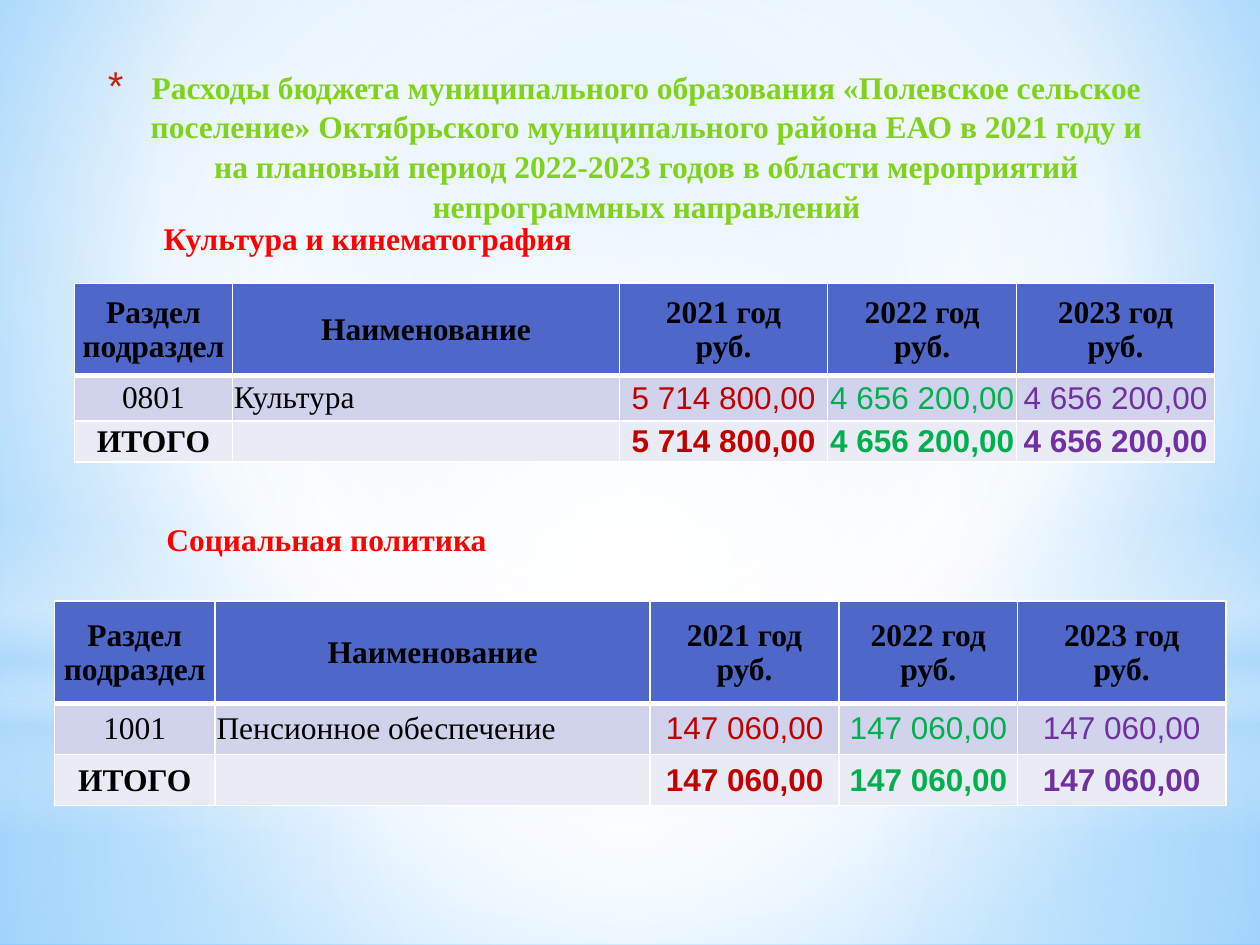
from lxml.etree import SubElement
from pptx import Presentation
from pptx.dml.color import RGBColor
from pptx.enum.shapes import MSO_SHAPE
from pptx.enum.text import MSO_ANCHOR, PP_ALIGN
from pptx.oxml.ns import qn
from pptx.util import Pt

COLORS = {
    "white": "FFFFFF", "haze": "B4DCFA", "sky": "9ED5FF", "deep_sky": "5BB9FF",
    "title": "81D31A", "bullet": "C3260C", "heading": "FF0000", "text": "000000",
    "header": "4E67C8", "row": "D0D3EB", "total": "E9EBF5",
    "2021": "C00000", "2022": "00B050", "2023": "7030A0",
}
SERIF, SANS = "Times New Roman", "Arial"
YEARS = ("2021", "2022", "2023")
CENTER = (50, 50, 50, 50)

# Background layers: shape, box, gradient stops (position, colour, opacity), focus
LAYERS = [
    (MSO_SHAPE.RECTANGLE, (0, 402, 720, 138),
     [(0, "white", 91), (37, "white", 76), (100, "haze", 79)], CENTER),
    (MSO_SHAPE.RECTANGLE, (0, 0, 720, 402),
     [(0, "white", 89), (48, "white", 62), (100, "haze", 79)], CENTER),
    (MSO_SHAPE.RECTANGLE, (0, 297, 720, 180),
     [(0, "white", 0), (29, "white", 30), (45, "haze", 40), (55, "white", 26),
      (65, "haze", 60), (100, "white", 0)], None),
    (MSO_SHAPE.OVAL, (0, 126, 720, 402),
     [(0, "white", 100), (56, "white", 0)], CENTER),
]


def rgb(name):
    return RGBColor.from_string(COLORS[name])


def child(parent, tag, **attributes):
    return SubElement(parent, qn(tag), {k: str(v) for k, v in attributes.items()})


def paint_gradient(fill, element, stops, focus):
    """Fill with a circular gradient around focus, or a vertical one without it."""
    fill.solid()
    solid = element.find(".//" + qn("a:solidFill"))
    gradient = solid.makeelement(qn("a:gradFill"), {"rotWithShape": "1"})
    solid.getparent().replace(solid, gradient)
    stop_list = child(gradient, "a:gsLst")
    for position, color, opacity in stops:
        stop = child(stop_list, "a:gs", pos=position * 1000)
        tint = child(stop, "a:srgbClr", val=COLORS[color])
        child(tint, "a:alpha", val=opacity * 1000)
    if focus:
        circle = child(gradient, "a:path", path="circle")
        sides = {side: value * 1000 for side, value in zip("ltrb", focus)}
        child(circle, "a:fillToRect", **sides)
    else:
        child(gradient, "a:lin", ang=90 * 60000, scaled=0)


def add_background(slide):
    paint_gradient(slide.background.fill, slide.element,
                   [(0, "sky", 100), (60, "white", 100), (100, "deep_sky", 100)],
                   (20, 10, 20, 60))
    for outline, box, stops, focus in LAYERS:
        layer = slide.shapes.add_shape(outline, *map(Pt, box))
        layer.shadow.inherit = False
        layer.line.fill.background()
        paint_gradient(layer.fill, layer.element, stops, focus)


def style_font(paragraph, color, bold=True, face=SERIF):
    for key, value in {"name": face, "size": Pt(18), "bold": bold}.items():
        setattr(paragraph.font, key, value)
    paragraph.font.color.rgb = rgb(color)


def add_text(slide, box, text, color, wrap=True):
    frame = slide.shapes.add_textbox(*map(Pt, box)).text_frame
    frame.word_wrap = wrap
    paragraph = frame.paragraphs[0]
    paragraph.text = text
    style_font(paragraph, color)
    return paragraph


def add_title(slide, box, text):
    title = add_text(slide, box, text, "title")
    title.alignment = PP_ALIGN.CENTER
    title.line_spacing = 1.05
    properties = title._p.get_or_add_pPr()
    properties.set("marL", str(Pt(25)))
    properties.set("indent", str(-Pt(25)))
    # Bullet parts belong between the line spacing and the default font
    defaults = properties.find(qn("a:defRPr"))
    bullet_color = child(properties, "a:buClr")
    child(bullet_color, "a:srgbClr", val=COLORS["bullet"])
    child(properties, "a:buSzPct", val=128000)
    child(properties, "a:buFont", typeface=SANS)
    child(properties, "a:buChar", char="*")
    if defaults is not None:
        properties.append(defaults)


def set_borders(cell, top, bottom):
    properties = cell._tc.get_or_add_tcPr()
    widths = {"a:lnL": 1, "a:lnR": 1, "a:lnT": top, "a:lnB": bottom}
    for index, (side, width) in enumerate(widths.items()):
        border = child(properties, side, w=Pt(width))
        solid = child(border, "a:solidFill")
        child(solid, "a:srgbClr", val=COLORS["white"])
        properties.insert(index, border)


def fill_cell(cell, text, fill, color, bold, face, alignment):
    cell.fill.solid()
    cell.fill.fore_color.rgb = rgb(fill)
    margins = {"margin_left": 0.75, "margin_right": 0.75,
               "margin_top": 0.75, "margin_bottom": 0}
    for key, value in margins.items():
        setattr(cell, key, Pt(value))
    cell.vertical_anchor = MSO_ANCHOR.MIDDLE
    cell.text = text
    for paragraph in cell.text_frame.paragraphs:
        paragraph.alignment = alignment
        paragraph.line_spacing = 0.97
        style_font(paragraph, color, bold, face)


def add_budget(slide, left, top, widths, heights, code, name, amounts):
    rows = [
        ("header", ["Раздел подраздел", "Наименование",
                    *(f"{year} год\nруб." for year in YEARS)]),
        ("row", [code, name, *amounts]),
        ("total", ["ИТОГО", "", *amounts]),
    ]
    box = (left, top, sum(widths), sum(heights))
    budget = slide.shapes.add_table(len(rows), len(widths), *map(Pt, box)).table
    for column, width in zip(budget.columns, widths):
        column.width = Pt(width)
    for line, height in zip(budget.rows, heights):
        line.height = Pt(height)
    for r, (kind, texts) in enumerate(rows):
        for c, text in enumerate(texts):
            is_amount = r > 0 and c > 1
            cell = budget.cell(r, c)
            fill_cell(cell, text, kind,
                      color=YEARS[c - 2] if is_amount else "text",
                      bold=kind != "row",
                      face=SANS if is_amount else SERIF,
                      alignment=PP_ALIGN.LEFT if r and c == 1 else PP_ALIGN.CENTER)
            set_borders(cell, top=3 if r == 1 else 1, bottom=3 if r == 0 else 1)


def main():
    deck = Presentation()
    deck.slide_width, deck.slide_height = Pt(720), Pt(540)
    slide = deck.slides.add_slide(deck.slide_layouts[6])
    add_background(slide)
    add_text(slide, (86.4, 121.7, 250, 29), "Культура и кинематография",
             "heading", wrap=False)
    add_text(slide, (88, 293.8, 380, 29), "Социальная политика", "heading")
    add_title(slide, (42.5, 34, 629, 90),
              "Расходы бюджета муниципального образования «Полевское сельское "
              "поселение» Октябрьского муниципального района ЕАО в 2021 году и "
              "на плановый период 2022-2023 годов в области мероприятий "
              "непрограммных направлений")
    add_budget(slide, 42.5, 162, (90.5, 221, 119, 108, 113), (52.5, 26, 23.5),
               "0801", "Культура",
               ("5 714 800,00", "4 656 200,00", "4 656 200,00"))
    add_budget(slide, 31, 343.5, (92, 248.5, 108, 102, 119), (58.5, 29.25, 29.25),
               "1001", "Пенсионное обеспечение", ("147 060,00",) * 3)
    deck.save("out.pptx")


if __name__ == "__main__":
    main()
